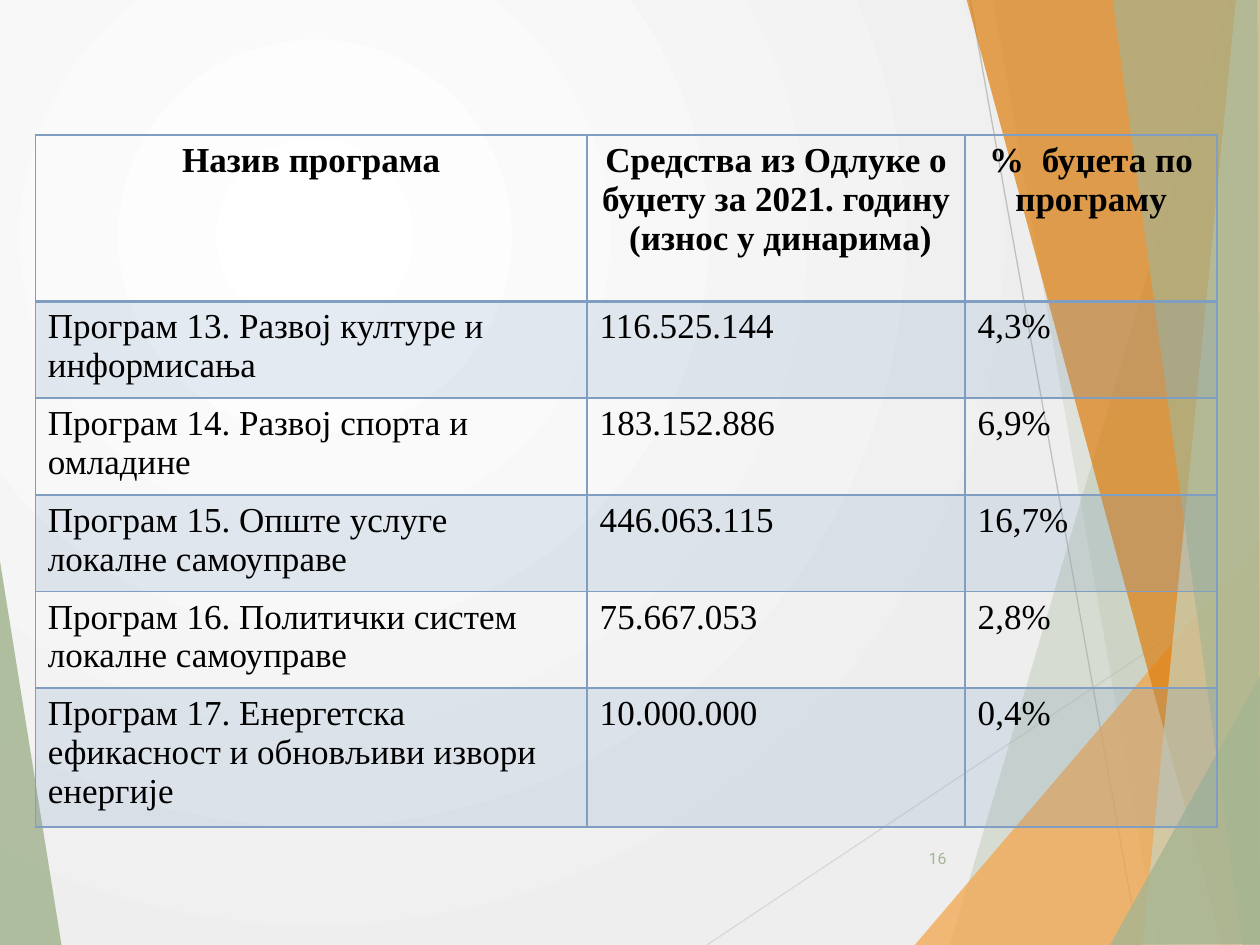
from dataclasses import dataclass
from typing import NamedTuple

from lxml import etree
from pptx import Presentation
from pptx.dml.color import RGBColor
from pptx.enum.shapes import MSO_CONNECTOR
from pptx.enum.text import MSO_ANCHOR, PP_ALIGN
from pptx.oxml import parse_xml
from pptx.oxml.ns import nsdecls, qn
from pptx.util import Inches, Pt

STRAIGHT = MSO_CONNECTOR.STRAIGHT
CENTER, LEFT, RIGHT = PP_ALIGN.CENTER, PP_ALIGN.LEFT, PP_ALIGN.RIGHT
MIDDLE = MSO_ANCHOR.MIDDLE


@dataclass(frozen=True)
class Theme:
    sage: str = "A5B592"
    pale_sage: str = "C9D3BE"
    amber: str = "F3A447"
    orange: str = "DD7E0E"
    blue: str = "809EC2"
    black: str = "000000"
    light_gray: str = "D9D9D9"
    gray: str = "BFBFBF"
    page_center: str = "FFFFFF"
    page_edge: str = "EEEEEE"
    table_font: str = "Times New Roman"
    number_font: str = "Roboto"
    table_size: int = 20
    number_size: int = 9
    band_opacity: int = 20


class Facet(NamedTuple):
    color: str
    opacity: int
    points: list[tuple[float, float]]


class Ray(NamedTuple):
    color: str
    start: tuple[float, float]
    end: tuple[float, float]


class Program(NamedTuple):
    name: str
    amount: str
    share: str


THEME = Theme()

LEFT_FACET = Facet(THEME.sage, 85, [(-0.01, 4.39), (0.49, 7.51), (-0.01, 7.5)])
RAYS = [
    Ray(THEME.light_gray, (5.61, 7.5), (10.01, 4.57)),
    Ray(THEME.gray, (7.7, 0), (9.04, 7.5)),
]
RIGHT_FACETS = [
    Facet(THEME.sage, 30, [(9.75, 0), (7.54, 7.5), (10.02, 7.51), (10.01, 0.01)]),
    Facet(THEME.sage, 20, [(7.88, -0.01), (9.19, 7.5), (10.01, 7.5), (10.01, -0.01)]),
    Facet(THEME.amber, 72, [(7.26, 7.5), (10, 4.29), (10.01, 7.5)]),
    Facet(THEME.orange, 70, [(7.67, -0.01), (9.7, 7.5), (10.01, 7.49), (10.01, -0.01)]),
    Facet(THEME.pale_sage, 70, [(9.81, -0.01), (9.07, 7.5), (10.01, 7.5), (10, -0.01)]),
    Facet(THEME.sage, 65, [(8.83, -0.01), (9.86, 7.5), (10, 7.5), (9.98, -0.01)]),
    Facet(THEME.sage, 80, [(8.81, 7.5), (10.01, 5.35), (10.01, 7.49)]),
]

COLUMN_WIDTHS = [4.38, 3, 2]
ROW_HEIGHTS = [1.32, 0.77, 0.64, 0.68, 0.68, 0.68]
HEADER = Program(
    "Назив програма",
    "Средства из Одлуке о буџету за 2021. годину  (износ у динарима)",
    "%  буџета по програму",
)
PROGRAMS = [
    Program("Програм 13. Развој културе и информисања", "116.525.144", "4,3%"),
    Program("Програм 14. Развој спорта и омладине", "183.152.886", "6,9%"),
    Program("Програм 15. Опште услуге локалне самоуправе", "446.063.115", "16,7%"),
    Program("Програм 16. Политички систем локалне самоуправе", "75.667.053", "2,8%"),
    Program("Програм 17. Енергетска ефикасност и обновљиви извори енергије",
            "10.000.000", "0,4%"),
]


def fill_solid(fill, color: str, opacity: int, holder) -> None:
    fill.solid()
    fill.fore_color.rgb = RGBColor.from_string(color)
    color_node = holder.find(qn("a:solidFill")).find(qn("a:srgbClr"))
    etree.SubElement(color_node, qn("a:alpha")).set("val", str(opacity * 1000))


def paint_background(page) -> None:
    fill = page.background.fill
    fill.gradient()
    for stop, color in zip(fill.gradient_stops, (THEME.page_center, THEME.page_edge)):
        stop.color.rgb = RGBColor.from_string(color)
    linear = next(page.element.iter(qn("a:lin")))
    linear.getparent().replace(linear, parse_xml(
        f'<a:path {nsdecls("a")} path="circle">'
        '<a:fillToRect l="50000" t="50000" r="100000" b="100000"/></a:path>'))


def draw_facet(page, facet: Facet) -> None:
    corners = [(Inches(x), Inches(y)) for x, y in facet.points]
    builder = page.shapes.build_freeform(*corners[0])
    builder.add_line_segments(corners[1:], close=True)
    shape = builder.convert_to_shape()
    shape.shadow.inherit = False
    shape.line.fill.background()
    fill_solid(shape.fill, facet.color, facet.opacity, shape.element.spPr)


def draw_ray(page, ray: Ray) -> None:
    ends = [Inches(value) for value in (*ray.start, *ray.end)]
    line = page.shapes.add_connector(STRAIGHT, *ends)
    line.line.color.rgb = RGBColor.from_string(ray.color)
    line.line.width = Pt(0.75)
    etree.SubElement(line.element.spPr, qn("a:effectLst"))


def write(frame, text: str, font: str, size: int, color: str, align, bold=False) -> None:
    para = frame.paragraphs[0]
    para.alignment = align
    span = para.add_run()
    span.text = text
    span.font.name = font
    span.font.size = Pt(size)
    span.font.bold = bold
    span.font.color.rgb = RGBColor.from_string(color)


def draw_cell(cell, text: str, row: int) -> None:
    is_header = row == 0
    properties = cell._tc.get_or_add_tcPr()
    for side in "LRTB":
        heavy = (is_header and side == "B") or (row == 1 and side == "T")
        properties.append(parse_xml(
            f'<a:ln{side} {nsdecls("a")} w="{Pt(2 if heavy else 1)}"><a:solidFill>'
            f'<a:srgbClr val="{THEME.blue}"/></a:solidFill></a:ln{side}>'))
    if row % 2:
        fill_solid(cell.fill, THEME.blue, THEME.band_opacity, properties)
    else:
        cell.fill.background()
    write(cell.text_frame, text, THEME.table_font, THEME.table_size, THEME.black,
          CENTER if is_header else LEFT, is_header)


def draw_table(page) -> None:
    rows = [HEADER, *PROGRAMS]
    table = page.shapes.add_table(
        len(rows), len(COLUMN_WIDTHS), Inches(0.28), Inches(1.07),
        Inches(sum(COLUMN_WIDTHS)), Inches(sum(ROW_HEIGHTS))).table
    table.horz_banding = False
    for column, width in zip(table.columns, COLUMN_WIDTHS):
        column.width = Inches(width)
    for index, (program, height) in enumerate(zip(rows, ROW_HEIGHTS)):
        table.rows[index].height = Inches(height)
        for column_index, text in enumerate(program):
            draw_cell(table.cell(index, column_index), text, index)


def draw_page_number(page) -> None:
    box = page.shapes.add_textbox(Inches(7.05), Inches(6.61), Inches(0.56), Inches(0.4))
    box.text_frame.word_wrap = True
    box.text_frame.vertical_anchor = MIDDLE
    write(box.text_frame, "16", THEME.number_font, THEME.number_size, THEME.sage, RIGHT)


def main() -> None:
    deck = Presentation()
    deck.slide_width, deck.slide_height = Inches(10), Inches(7.5)
    page = deck.slides.add_slide(deck.slide_layouts[6])

    # Backdrop: gradient, facets and thin rays
    paint_background(page)
    draw_facet(page, LEFT_FACET)
    for ray in RAYS:
        draw_ray(page, ray)
    for facet in RIGHT_FACETS:
        draw_facet(page, facet)

    # Content
    draw_page_number(page)
    draw_table(page)
    deck.save("out.pptx")


if __name__ == "__main__":
    main()
